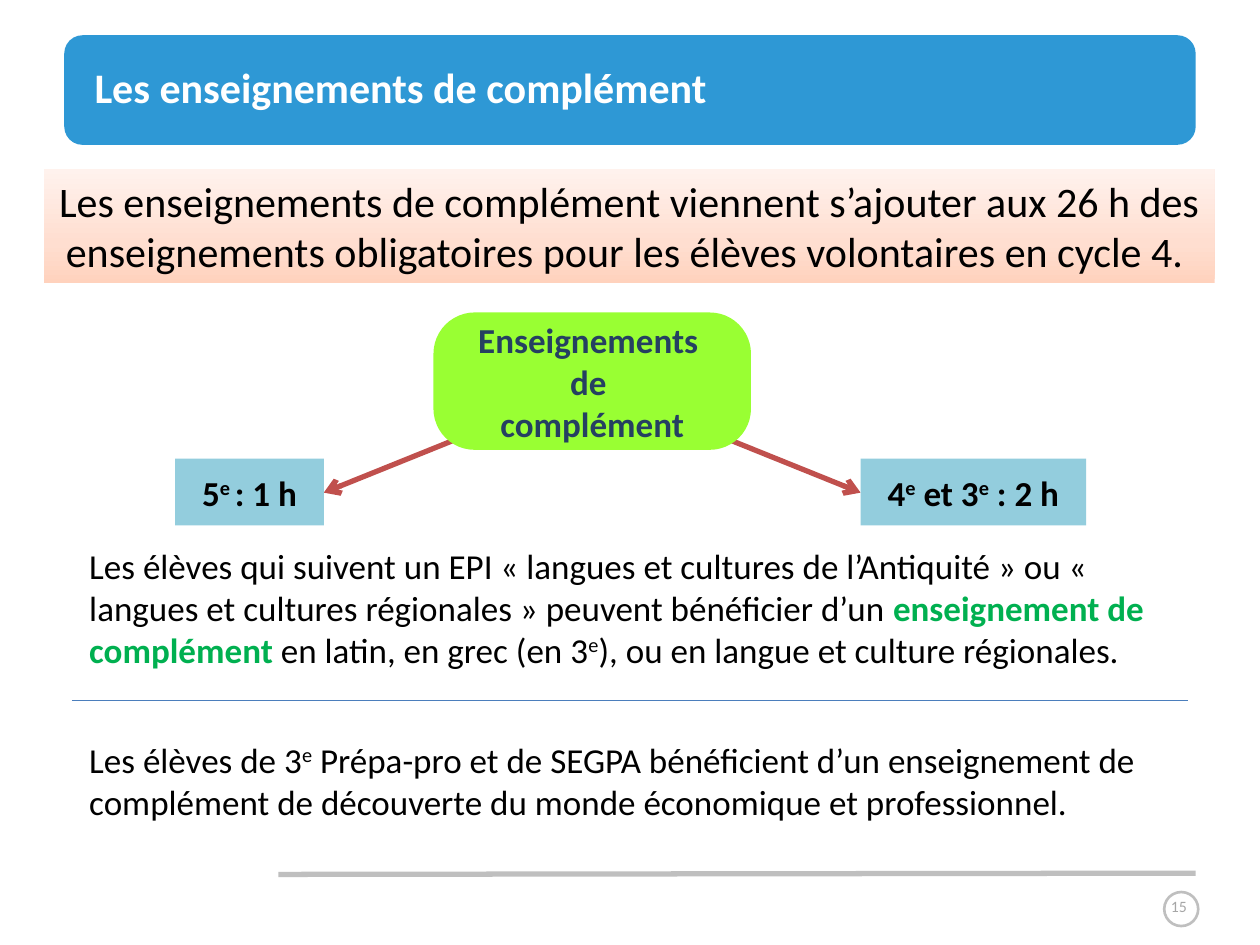
from copy import deepcopy

from pptx import Presentation
from pptx.dml.color import RGBColor
from pptx.enum.shapes import MSO_CONNECTOR as Connector, MSO_SHAPE as Shape
from pptx.enum.text import MSO_ANCHOR as Anchor, MSO_AUTO_SIZE as AutoSize, PP_ALIGN as Align
from pptx.oxml.ns import qn
from pptx.util import Inches, Pt

WIDTH, HEIGHT = 10, 7.5
FONT = "Calibri"
BLACK, WHITE, NAVY, GREEN = "000000", "FFFFFF", "254061", "00B050"
BLUE, LIME, AQUA, RED = "2E98D5", "99FF33", "93CDDD", "C0504D"
GREY, NUMBER_GREY, RULE_BLUE = "BFBFBF", "A6A6A6", "4B7EBC"

TITLE = "Les enseignements de complément"
PAGE_NUMBER = "15"
INTRO = [[("Les enseignements de complément viennent s’ajouter aux 26 h des "
           "enseignements obligatoires pour les élèves volontaires en cycle 4. ", "")]]
HUB = [[("Enseignements ", "")], [("de ", "")], [("complément", "")]]
LEVELS = [
    (1.39, 1.18, 0.1, [[("5", ""), ("e ", "super"), (": 1 h", "")]]),
    (6.83, 1.79, 0.04, [[("4", ""), ("e", "super"), (" et 3", ""), ("e", "super"),
                         (" : 2 h", "")]]),
]
NOTES = [
    (4.27, 1.11, [[
        ("Les élèves qui suivent un EPI « langues et cultures de l’Antiquité » ou "
         "« langues et cultures régionales » peuvent bénéficier d’un ", ""),
        ("enseignement de complément", "key"),
        (" en latin, en grec (en 3", ""), ("e", "super"),
        ("), ou en langue et culture régionales.", "")]]),
    (5.81, 0.77, [[
        ("Les élèves de 3", ""), ("e", "super"),
        (" Prépa-pro et de SEGPA bénéficient d’un enseignement de complément "
         "de découverte du monde économique et professionnel.", "")]]),
]
GRADIENT = [(0, "FFD2BD"), (0.35, "FFDED0"), (1, "FFF2ED")]
ARROWS = [((3.81, 3.41), (2.57, 3.91)), ((5.59, 3.41), (6.83, 3.91))]


def colour(value):
    return RGBColor.from_string(value)


def inches(values):
    return [Inches(value) for value in values]


def style_font(font, size, tint, bold=False):
    font.name, font.size, font.bold = FONT, Pt(size), bold
    font.color.rgb = colour(tint)


def write(box, paragraphs, size, tint=BLACK, bold=False, align=Align.CENTER,
          anchor=Anchor.MIDDLE, side=0.1):
    frame = box.text_frame
    frame.word_wrap = True
    frame.vertical_anchor = anchor
    frame.margin_left = frame.margin_right = Inches(side)
    for index, spans in enumerate(paragraphs):
        para = frame.add_paragraph() if index else frame.paragraphs[0]
        para.alignment = align
        style_font(para.font, size, tint, bold)
        for text, style in spans:
            span = para.add_run()
            span.text = text
            if style == "super":
                span.font._element.set("baseline", "30000")
            elif style == "key":
                span.font.bold = True
                span.font.color.rgb = colour(GREEN)
    return frame


def add_block(page, kind, place, fill=None):
    block = page.shapes.add_shape(kind, *inches(place))
    block.shadow.inherit = False
    block.line.fill.background()
    if fill:
        block.fill.solid()
        block.fill.fore_color.rgb = colour(fill)
    else:
        block.fill.background()
    return block


def add_line(page, start, end, tint, width, arrow=False):
    line = page.shapes.add_connector(Connector.STRAIGHT, *inches(start + end))
    line.line.color.rgb = colour(tint)
    line.line.width = Pt(width)
    if arrow:
        outline = line.line._get_or_add_ln()
        tip = outline.makeelement(qn("a:tailEnd"), {"type": "arrow"})
        outline.append(tip)
    properties = line._element.spPr
    properties.append(properties.makeelement(qn("a:effectLst"), {}))


def fill_gradient(block):
    block.fill.gradient()
    block.fill.gradient_angle = 90
    stops = block.fill.gradient_stops
    first = stops[0]._gs
    first.addnext(deepcopy(first))
    for stop, (position, tint) in zip(block.fill.gradient_stops, GRADIENT):
        stop.position = position
        stop.color.rgb = colour(tint)


def add_frame(page):
    banner = add_block(page, Shape.ROUNDED_RECTANGLE, (0.51, 0.28, 8.98, 0.87), BLUE)
    title = page.shapes.title
    banner._element.addnext(title._element)
    title.left, title.top, title.width, title.height = inches((0.75, 0.18, 8.74, 1.02))
    frame = write(title, [[(TITLE, "")]], 24, WHITE, True, Align.LEFT, side=0)
    frame.margin_top = frame.margin_bottom = 0
    frame.auto_size = AutoSize.NONE
    number = page.shapes.add_textbox(*inches((9.01, 7.06, 0.72, 0.27)))
    write(number, [[(PAGE_NUMBER + " ", "")]], 9, NUMBER_GREY)
    add_line(page, (2.21, 6.94), (9.49, 6.93), GREY, 3)
    ring = add_block(page, Shape.OVAL, (9.24, 7.08, 0.27, 0.27))
    ring.line.color.rgb = colour(GREY)
    ring.line.width = Pt(1.5)


def add_content(page):
    for top, height, paragraphs in NOTES:
        note = page.shapes.add_textbox(*inches((0.61, top, 8.79, height)))
        write(note, paragraphs, 20, align=Align.LEFT, anchor=Anchor.TOP)
    for start, end in ARROWS:
        add_line(page, start, end, RED, 3, arrow=True)
    for left, width, side, paragraphs in LEVELS:
        level = add_block(page, Shape.RECTANGLE, (left, 3.64, width, 0.53), AQUA)
        write(level, paragraphs, 20, bold=True, side=side)
    intro = add_block(page, Shape.RECTANGLE, (0.35, 1.34, 9.29, 0.91))
    fill_gradient(intro)
    write(intro, INTRO, 24, anchor=Anchor.TOP)
    add_line(page, (0.57, 5.56), (9.43, 5.56), RULE_BLUE, 0.75)
    hub = add_block(page, Shape.ROUNDED_RECTANGLE, (3.44, 2.48, 2.52, 1.09), LIME)
    hub.adjustments[0] = 0.3
    write(hub, HUB, 20, NAVY, True).word_wrap = False


def main():
    deck = Presentation()
    deck.slide_width, deck.slide_height = inches((WIDTH, HEIGHT))
    page = deck.slides.add_slide(deck.slide_layouts[5])
    add_frame(page)
    add_content(page)
    deck.save("out.pptx")


if __name__ == "__main__":
    main()
